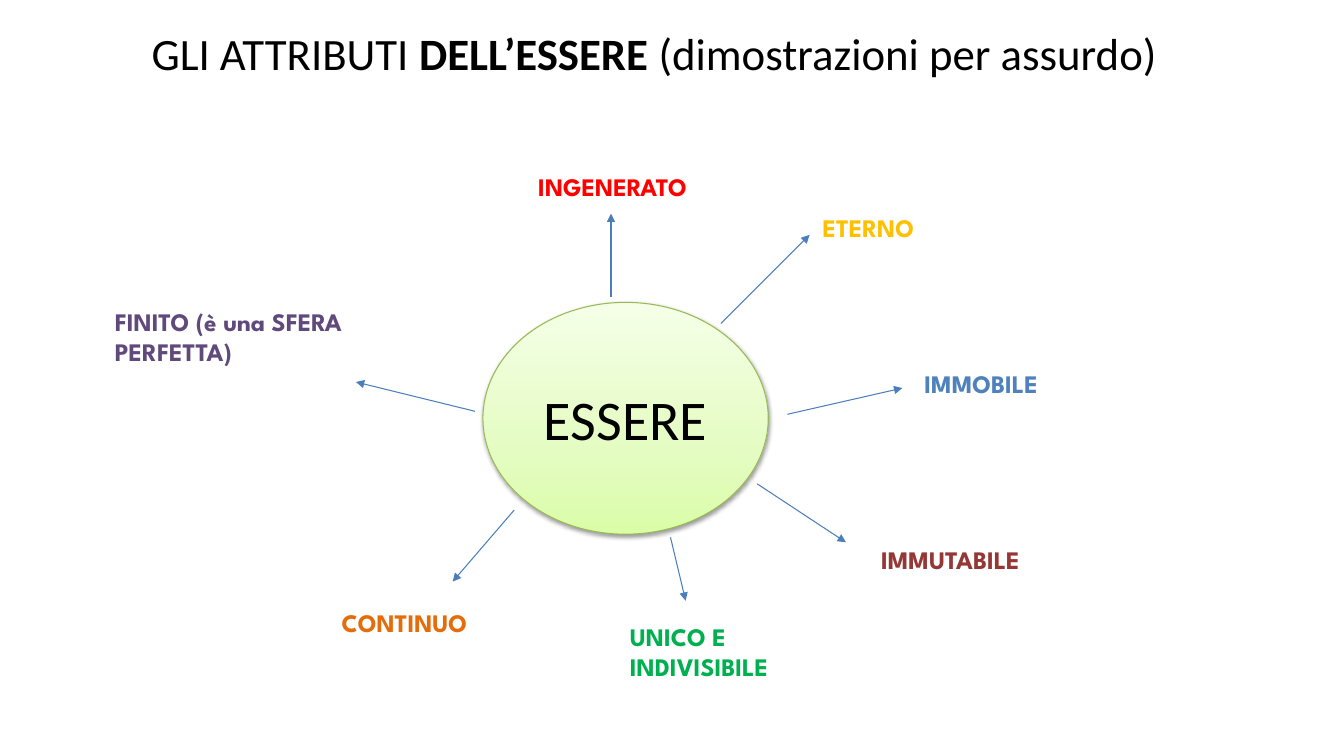
import copy
import pptx
import pptx.util
import pptx.dml.color
import pptx.enum.shapes
import pptx.enum.text
import pptx.oxml
import pptx.oxml.ns

Inches, Pt = pptx.util.Inches, pptx.util.Pt
RGBColor = pptx.dml.color.RGBColor
PP_ALIGN, MSO_ANCHOR = pptx.enum.text.PP_ALIGN, pptx.enum.text.MSO_ANCHOR

BLACK = RGBColor(0x00, 0x00, 0x00)
ARROW_BLUE = RGBColor(0x4B, 0x7E, 0xBC)
OUTLINE_GREEN = RGBColor(0x98, 0xB9, 0x55)
DEEP_GREEN = RGBColor(0xDA, 0xFD, 0xA7)
MID_GREEN = RGBColor(0xE4, 0xFC, 0xC2)
PALE_GREEN = RGBColor(0xF5, 0xFF, 0xE7)
RED = RGBColor(0xFF, 0x00, 0x00)
AMBER = RGBColor(0xFF, 0xC0, 0x00)
BLUE = RGBColor(0x4F, 0x81, 0xBD)
BROWN = RGBColor(0x95, 0x37, 0x35)
GREEN = RGBColor(0x00, 0xB0, 0x50)
ORANGE = RGBColor(0xE4, 0x6C, 0x0A)
PURPLE = RGBColor(0x60, 0x4A, 0x7B)


def add_run(paragraph, text, font, size, color, bold=False):
    run = paragraph.add_run()
    run.text = text
    run.font.name = font
    run.font.size = Pt(size)
    run.font.bold = bold
    run.font.color.rgb = color


def add_xml(parent, xml):
    element = pptx.oxml.parse_xml(xml.replace("NS", pptx.oxml.ns.nsdecls("a")))
    parent.append(element)
    return element


deck = pptx.Presentation()
deck.slide_width, deck.slide_height = Inches(13.33), Inches(7.5)
slide = deck.slides.add_slide(deck.slide_layouts[5])

# Heading
heading = slide.shapes.title
heading.left, heading.top = Inches(0.27), Inches(0.2)
heading.width, heading.height = Inches(12.44), Inches(0.8)
heading.text_frame.vertical_anchor = MSO_ANCHOR.TOP
heading_line = heading.text_frame.paragraphs[0]
heading_line.alignment = PP_ALIGN.CENTER
for words, bold in (("GLI ATTRIBUTI ", False), ("DELL’ESSERE", True),
                    (" (dimostrazioni per assurdo)", False)):
    add_run(heading_line, words, "Calibri", 32, BLACK, bold)

# Central concept, shaded from the bottom up
essere = slide.shapes.add_shape(pptx.enum.shapes.MSO_SHAPE.OVAL,
                                Inches(4.79), Inches(3), Inches(2.83), Inches(2.3))
essere.fill.gradient()
essere.fill.gradient_angle = 90
stops = essere.fill.gradient_stops
stop_list = essere.element.spPr.find(".//" + pptx.oxml.ns.qn("a:gsLst"))
stop_list.insert(1, copy.deepcopy(stop_list[0]))
for stop, position, color in zip(essere.fill.gradient_stops, (0, 0.35, 1),
                                 (DEEP_GREEN, MID_GREEN, PALE_GREEN)):
    stop.position = position
    stop.color.rgb = color
essere.line.color.rgb = OUTLINE_GREEN
essere.line.width = Pt(0.75)
essere.shadow.inherit = False
add_xml(essere.element.spPr.find(pptx.oxml.ns.qn("a:effectLst")),
        '<a:outerShdw NS blurRad="40000" dist="20000" dir="5400000" rotWithShape="0">'
        '<a:srgbClr val="000000"><a:alpha val="38000"/></a:srgbClr></a:outerShdw>')
essere.text_frame.vertical_anchor = MSO_ANCHOR.MIDDLE
essere_line = essere.text_frame.paragraphs[0]
essere_line.alignment = PP_ALIGN.CENTER
add_run(essere_line, "ESSERE", "Calibri", 40, BLACK)

# Attributes clockwise: text, colour, label box, arrow start and end (inches)
attributes = (
    ("INGENERATO", RED, (5.24, 1.65, 2.5, 0.4), (6.06, 2.95, 6.06, 2.12)),
    ("ETERNO", AMBER, (8.06, 2.06, 2.35, 0.4), (7.15, 3.21, 8.03, 2.33)),
    ("IMMOBILE", BLUE, (9.07, 3.61, 1.62, 0.4), (7.81, 4.11, 8.95, 3.85)),
    ("IMMUTABILE", BROWN, (8.64, 5.35, 1.91, 0.4), (7.51, 4.8, 8.39, 5.38)),
    ("UNICO E INDIVISIBILE", GREEN, (6.15, 6.11, 2.33, 0.71), (6.65, 5.33, 6.8, 5.96)),
    ("CONTINUO", ORANGE, (3.29, 5.98, 1.56, 0.4), (5.1, 5.06, 4.49, 5.77)),
    ("FINITO (è una SFERA PERFETTA)", PURPLE, (1.04, 2.99, 3.31, 0.71),
     (4.71, 4.08, 3.53, 3.79)),
)
for attribute, color, label_box, arrow_ends in attributes:
    arrow = slide.shapes.add_connector(pptx.enum.shapes.MSO_CONNECTOR.STRAIGHT,
                                       *map(Inches, arrow_ends))
    arrow.line.color.rgb = ARROW_BLUE
    arrow.line.width = Pt(0.75)
    add_xml(arrow.line._get_or_add_ln(), '<a:tailEnd NS type="triangle"/>')
    add_xml(arrow.element.spPr, '<a:effectLst NS/>')

    label = slide.shapes.add_textbox(*map(Inches, label_box))
    label.text_frame.word_wrap = True
    label.text_frame.auto_size = pptx.enum.text.MSO_AUTO_SIZE.SHAPE_TO_FIT_TEXT
    add_run(label.text_frame.paragraphs[0], attribute, "League Spartan", 18, color, True)

deck.save("out.pptx")
